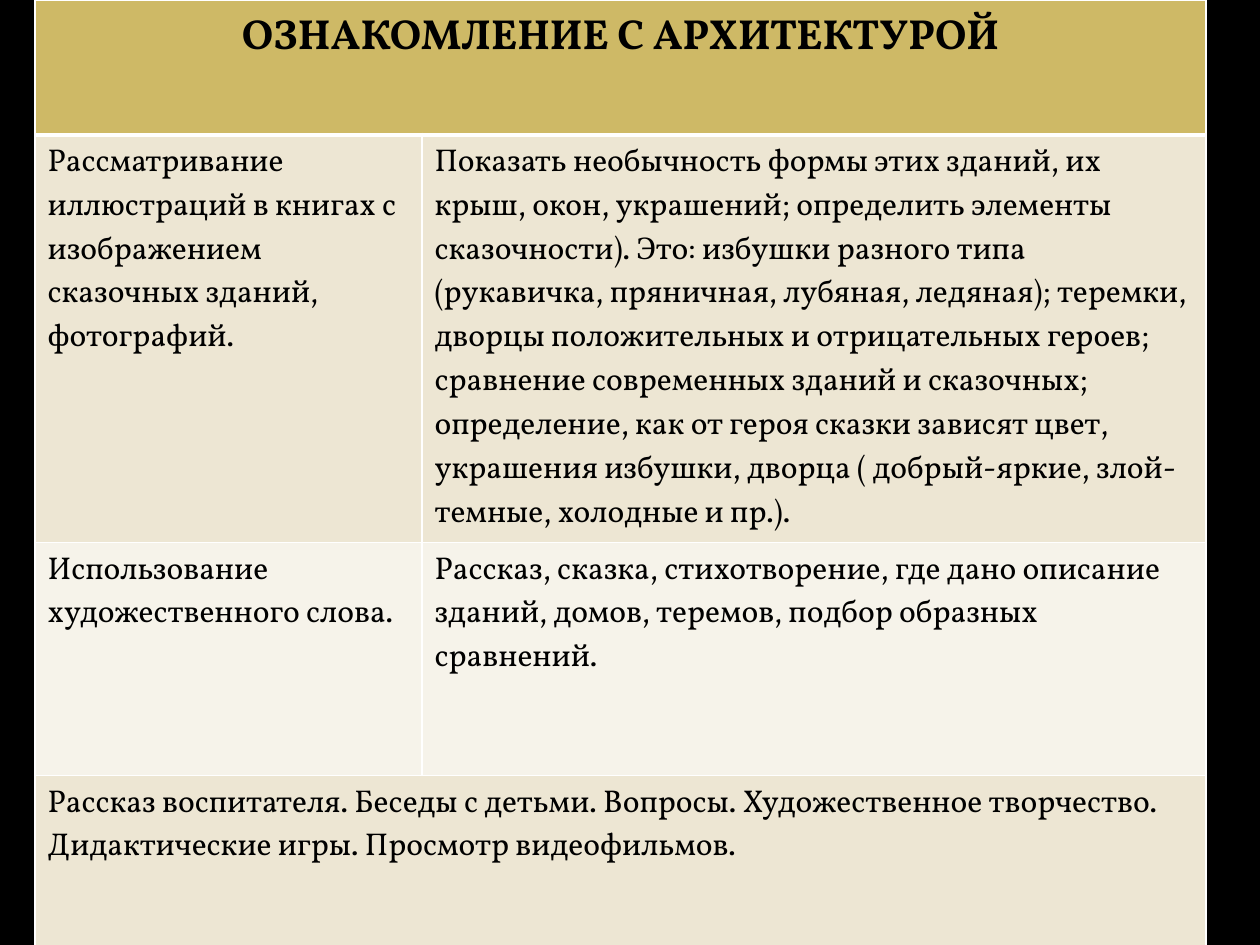
from dataclasses import dataclass

from lxml import etree
from pptx import Presentation
from pptx.dml.color import RGBColor
from pptx.enum.text import MSO_ANCHOR, PP_ALIGN
from pptx.oxml.ns import qn
from pptx.util import Inches, Pt

LEFT, CENTER = PP_ALIGN.LEFT, PP_ALIGN.CENTER
TOP, MIDDLE = MSO_ANCHOR.TOP, MSO_ANCHOR.MIDDLE
DPI = 126


@dataclass(frozen=True)
class Theme:
    font: str = "Vollkorn"
    back: str = "000000"
    ink: str = "000000"
    rule: str = "FFFFFF"
    head: str = "CEB966"
    bands: tuple = ("EDE6D3", "F6F3EA")
    big: int = 24
    body: int = 18
    thin: int = 1
    thick: int = 3


THEME = Theme()
HEAD = "ОЗНАКОМЛЕНИЕ С АРХИТЕКТУРОЙ"
ROWS = [
    ["Рассматривание иллюстраций в книгах с изображением сказочных зданий, "
     "фотографий.",
     "Показать необычность формы этих зданий, их крыш, окон, украшений; "
     "определить элементы сказочности). Это: избушки разного типа "
     "(рукавичка, пряничная, лубяная, ледяная); теремки, дворцы "
     "положительных и отрицательных героев; сравнение современных зданий и "
     "сказочных; определение, как от героя сказки зависят цвет, украшения "
     "избушки, дворца ( добрый-яркие, злой-темные, холодные и пр.)."],
    ["Использование художественного слова.",
     "Рассказ, сказка, стихотворение, где дано описание зданий, домов, "
     "теремов, подбор образных сравнений."],
    ["Рассказ воспитателя. Беседы с детьми. Вопросы. Художественное "
     "творчество.\nДидактические игры. Просмотр видеофильмов."],
]
COLS = [387, 784]
HIGH = [135, 319, 233, 233]


def px(n):
    return round(Inches(n) / DPI)


def rgb(code):
    return RGBColor.from_string(code)


def write(cell, text, size=THEME.body, bold=False, align=LEFT, anchor=TOP):
    cell.vertical_anchor = anchor
    frame = cell.text_frame
    for i, line in enumerate(text.split("\n")):
        para = frame.add_paragraph() if i else frame.paragraphs[0]
        para.alignment = align
        run = para.add_run()
        run.text = line
        font = run.font
        font.name, font.size, font.bold = THEME.font, Pt(size), bold
        font.color.rgb = rgb(THEME.ink)


def paint(cell, color, top, bottom):
    """Fill a cell and rule its four sides."""
    cell.fill.solid()
    cell.fill.fore_color.rgb = rgb(color)
    props = cell._tc.get_or_add_tcPr()
    sides = {"L": THEME.thin, "R": THEME.thin, "T": top, "B": bottom}
    for i, (side, width) in enumerate(sides.items()):
        line = etree.Element(qn(f"a:ln{side}"), w=str(Pt(width)))
        solid = etree.SubElement(line, qn("a:solidFill"))
        etree.SubElement(solid, qn("a:srgbClr"), val=THEME.rule)
        props.insert(i, line)


def plan(slide, left, top):
    """Table with a merged heading, two split rows and a merged last row."""
    table = slide.shapes.add_table(
        len(HIGH), len(COLS), px(left), px(top),
        px(sum(COLS)), px(sum(HIGH))).table
    for col, width in zip(table.columns, COLS):
        col.width = px(width)
    for row, height in zip(table.rows, HIGH):
        row.height = px(height)

    # Fills and rules, with a thick rule under the heading
    for r in range(len(HIGH)):
        color = THEME.bands[(r - 1) % 2] if r else THEME.head
        over = THEME.thick if r == 1 else THEME.thin
        under = THEME.thick if r == 0 else THEME.thin
        for c in range(len(COLS)):
            paint(table.cell(r, c), color, over, under)

    # Text; a row with one entry spans both columns
    for r, texts in enumerate([[HEAD], *ROWS]):
        if len(texts) == 1:
            table.cell(r, 0).merge(table.cell(r, len(COLS) - 1))
        for c, text in enumerate(texts):
            if r:
                write(table.cell(r, c), text)
            else:
                write(table.cell(r, c), text, size=THEME.big, bold=True,
                      align=CENTER, anchor=MIDDLE)
    table.cell(0, 0).margin_bottom = px(64)


def main():
    deck = Presentation()
    deck.slide_width, deck.slide_height = Inches(10), Inches(7.5)
    slide = deck.slides.add_slide(deck.slide_layouts[6])
    slide.background.fill.solid()
    slide.background.fill.fore_color.rgb = rgb(THEME.back)
    plan(slide, 35, 0)
    deck.save("out.pptx")


if __name__ == "__main__":
    main()
